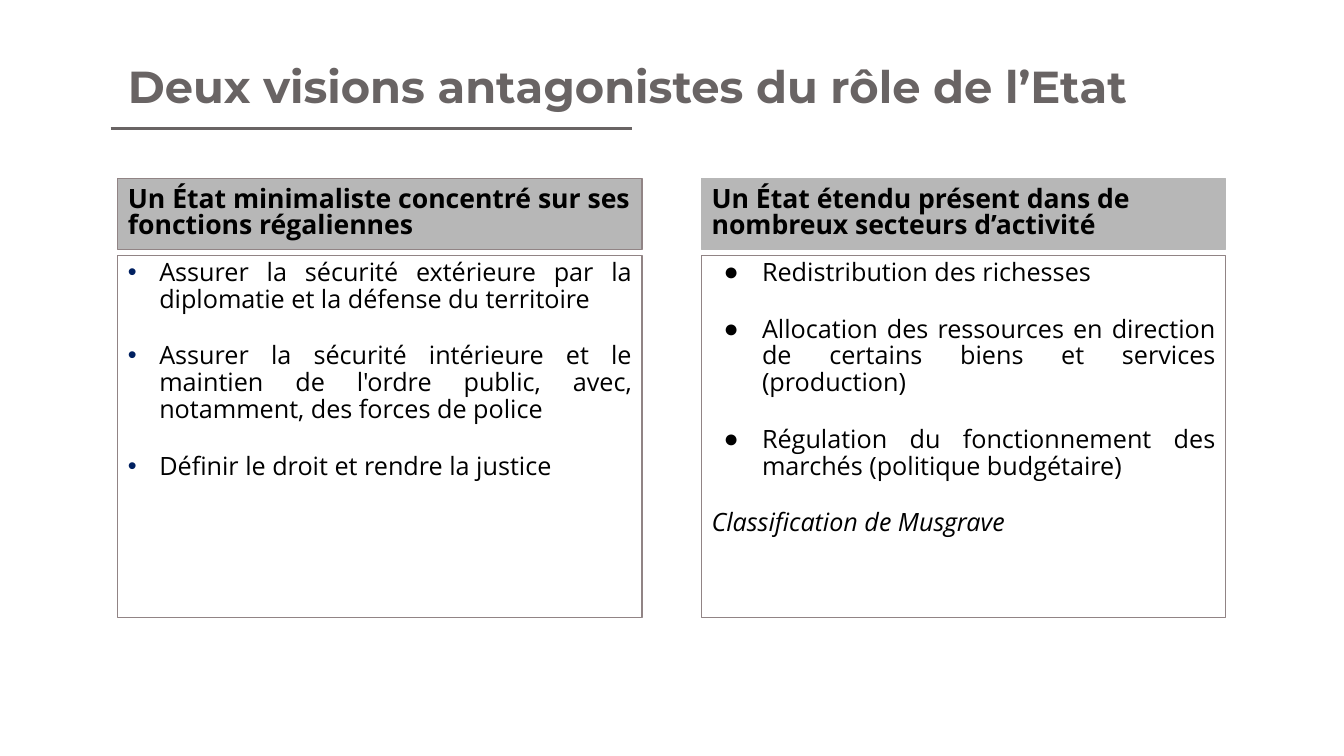
from lxml.etree import SubElement
from pptx import Presentation
from pptx.dml.color import RGBColor
from pptx.enum.shapes import MSO_CONNECTOR
from pptx.enum.text import MSO_ANCHOR, MSO_AUTO_SIZE, PP_ALIGN
from pptx.oxml.ns import qn
from pptx.util import Cm, Pt

COLORS = {"title": "696464", "band": "B7B7B7", "border": "918485",
          "text": "000000", "navy": "002060"}


def rgb(name):
    return RGBColor.from_string(COLORS[name])


def write(tf, text, size=18, font="Open Sans", color="text", bold=False,
          italic=False, align=PP_ALIGN.LEFT, spacing=0.9, before=0,
          bullet=None, bullet_color="text", left=0, hang=0):
    """Fill the first empty paragraph of tf, or add one."""
    p = tf.paragraphs[0] if not tf.text else tf.add_paragraph()
    pPr = p._p.get_or_add_pPr()
    pPr.set("marL", str(Cm(left)))
    pPr.set("indent", str(-Cm(hang)))
    if bullet:
        clr = SubElement(pPr, qn("a:buClr"))
        SubElement(clr, qn("a:srgbClr")).set("val", COLORS[bullet_color])
        SubElement(pPr, qn("a:buChar")).set("char", bullet)
    else:
        SubElement(pPr, qn("a:buNone"))
    p.alignment, p.line_spacing = align, spacing
    p.space_before, p.space_after = Pt(before), Pt(0)
    r = p.add_run()
    r.text = text
    r.font.name, r.font.size = font, Pt(size)
    r.font.bold, r.font.italic = bold, italic
    r.font.color.rgb = rgb(color)


prs = Presentation()
prs.slide_width, prs.slide_height = Cm(33.87), Cm(19.05)
s = prs.slides.add_slide(prs.slide_layouts[4])  # comparison layout
ph = {sp.placeholder_format.idx: sp for sp in s.placeholders}

# Title and its rule
sp = ph[0]
sp.left, sp.top, sp.width, sp.height = Cm(2.97), Cm(1.35), Cm(27.94), Cm(1.78)
sp.text_frame.vertical_anchor = MSO_ANCHOR.MIDDLE
sp.text_frame.auto_size = MSO_AUTO_SIZE.NONE
write(sp.text_frame, "Deux visions antagonistes du rôle de l’Etat",
      size=32, font="Montserrat", color="title", bold=True)

rule = s.shapes.add_connector(MSO_CONNECTOR.STRAIGHT,
                              Cm(2.79), Cm(3.23), Cm(15.93), Cm(3.23))
rule.line.color.rgb, rule.line.width = rgb("title"), Pt(2.25)
SubElement(rule._element.spPr, qn("a:effectLst"))

# Two columns: heading band above a bordered list
columns = [
    dict(left=2.97, band_line="border",
         heading="Un État minimaliste concentré sur ses fonctions régaliennes",
         items=["Assurer la sécurité extérieure par la diplomatie et la défense du territoire",
                "Assurer la sécurité intérieure et le maintien de l'ordre public, "
                "avec, notamment, des forces de police",
                "Définir le droit et rendre la justice"],
         style=dict(bullet="•", bullet_color="navy", left=0.79, hang=0.79)),
    dict(left=17.68, band_line="band",
         heading="Un État étendu présent dans de nombreux secteurs d’activité",
         items=["Redistribution des richesses",
                "Allocation des ressources en direction de certains biens et services (production)",
                "Régulation du fonctionnement des marchés (politique budgétaire)"],
         style=dict(bullet="●", left=1.27, hang=0.97),
         note="Classification de Musgrave"),
]
LIST = dict(align=PP_ALIGN.JUSTIFY, spacing=0.88)
GAP = 21.6  # one line of list text, in points

for i, col in enumerate(columns):
    band, box = ph[1 + 2 * i], ph[2 + 2 * i]
    for sp, top, height, line, anchor in (
            (band, 4.5, 1.78, col["band_line"], MSO_ANCHOR.MIDDLE),
            (box, 6.43, 9.14, "border", MSO_ANCHOR.TOP)):
        sp.left, sp.top = Cm(col["left"]), Cm(top)
        sp.width, sp.height = Cm(13.21), Cm(height)
        sp.line.color.rgb, sp.line.width = rgb(line), Pt(0.75)
        sp.text_frame.vertical_anchor = anchor
        sp.text_frame.auto_size = MSO_AUTO_SIZE.NONE
    band.fill.solid()
    band.fill.fore_color.rgb = rgb("band")
    write(band.text_frame, col["heading"], size=19, bold=True, spacing=0.8)

    for n, item in enumerate(col["items"]):
        write(box.text_frame, item, before=GAP if n else 0, **LIST, **col["style"])
    if "note" in col:
        write(box.text_frame, col["note"], italic=True, before=GAP, **LIST)

prs.save("out.pptx")
